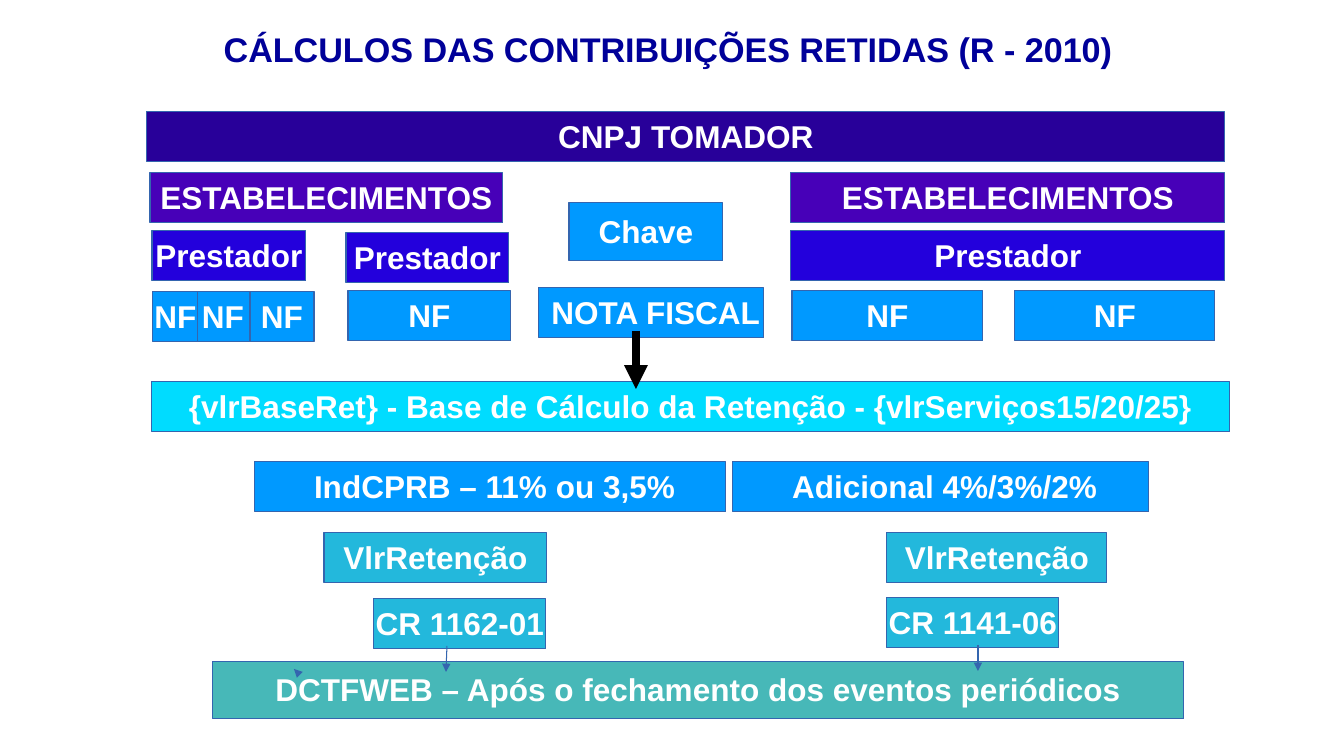
from pptx import Presentation
from pptx import util as u
from pptx.dml.color import RGBColor
from pptx.enum import shapes, text
from pptx.oxml.ns import qn
from lxml import etree

PX = 914400 / 100.8
ROW_H = 50

WHITE = RGBColor(0xFF, 0xFF, 0xFF)
BLACK = RGBColor(0x00, 0x00, 0x00)
NAVY = RGBColor(0x00, 0x00, 0x99)
EDGE = RGBColor(0x34, 0x65, 0xAF)
INDIGO = RGBColor(0x28, 0x00, 0x99)
PURPLE = RGBColor(0x47, 0x00, 0xB8)
BLUE = RGBColor(0x23, 0x00, 0xDC)
SKY = RGBColor(0x00, 0x99, 0xFF)
CYAN = RGBColor(0x00, 0xDC, 0xFF)
TURQUOISE = RGBColor(0x23, 0xB8, 0xDC)
TEAL = RGBColor(0x47, 0xB8, 0xB8)

BOXES = [
    ("CNPJ TOMADOR", INDIGO, 147, 112, 1078, ROW_H),
    ("DCTFWEB – Após o fechamento dos eventos periódicos", TEAL, 213, 662, 971, 57),
    ("ESTABELECIMENTOS", PURPLE, 150, 173, 353, ROW_H),
    ("ESTABELECIMENTOS", PURPLE, 791, 173, 434, ROW_H),
    ("Prestador", BLUE, 152, 231, 154, ROW_H),
    ("Prestador", BLUE, 346, 233, 163, ROW_H),
    ("Prestador", BLUE, 791, 231, 434, ROW_H),
    ("NF", SKY, 250, 292, 64, ROW_H),
    ("NF", SKY, 196, 292, 54, ROW_H),
    ("NF", SKY, 153, 292, 45, ROW_H),
    ("NF", SKY, 348, 291, 163, ROW_H),
    ("NF", SKY, 792, 291, 191, ROW_H),
    ("NF", SKY, 1015, 291, 200, ROW_H),
    ("Chave", SKY, 569, 203, 154, 58),
    (" NOTA FISCAL", SKY, 539, 288, 225, ROW_H),
    ("{vlrBaseRet} - Base de Cálculo da Retenção - {vlrServiços15/20/25}",
     CYAN, 152, 382, 1078, ROW_H),
    (" IndCPRB – 11% ou 3,5%", SKY, 255, 462, 471, ROW_H),
    (" Adicional 4%/3%/2%", SKY, 733, 462, 416, ROW_H),
    ("VlrRetenção", TURQUOISE, 324, 533, 223, ROW_H),
    ("VlrRetenção", TURQUOISE, 887, 533, 220, ROW_H),
    ("CR 1162-01", TURQUOISE, 374, 599, 172, ROW_H),
    ("CR 1141-06", TURQUOISE, 887, 598, 172, ROW_H),
]

ARROWS = [
    (636, 331, 636, 389, BLACK, 5.67),
    (295, 670, 294, 669, EDGE, 0.75),
    (447, 646, 446, 672, EDGE, 0.75),
    (978, 645, 978, 671, EDGE, 0.75),
]


def px(*values):
    return [u.Emu(round(v * PX)) for v in values]


def write(sp, content, size, color):
    tf = sp.text_frame
    tf.text = content
    tf.word_wrap = False
    tf.auto_size = text.MSO_AUTO_SIZE.NONE
    tf.vertical_anchor = text.MSO_ANCHOR.MIDDLE
    tf.margin_left, tf.margin_top, tf.margin_right, tf.margin_bottom = px(9, 6, 9, 5)
    p = tf.paragraphs[0]
    p.alignment = text.PP_ALIGN.CENTER
    p.line_spacing = 0.93
    p.font.name = "Arial"
    p.font.size = u.Pt(size)
    p.font.bold = True
    p.font.color.rgb = color


def add_title(s, content):
    sp = s.shapes.title
    sp.left, sp.top, sp.width, sp.height = px(51, 26, 1234, 49)
    write(sp, content, 24.4, NAVY)


def add_box(s, content, fill, x, y, w, h):
    sp = s.shapes.add_shape(shapes.MSO_SHAPE.RECTANGLE, *px(x, y, w, h))
    sp.shadow.inherit = False
    sp.fill.solid()
    sp.fill.fore_color.rgb = fill
    sp.line.color.rgb = EDGE
    sp.line.width = u.Pt(0.75)
    write(sp, content, 22.5, WHITE)


def add_arrow(s, x1, y1, x2, y2, color, width):
    c = s.shapes.add_connector(shapes.MSO_CONNECTOR.STRAIGHT, *px(x1, y1, x2, y2))
    c.line.color.rgb = color
    c.line.width = u.Pt(width)
    etree.SubElement(c.line._get_or_add_ln(), qn("a:tailEnd"), type="triangle")
    etree.SubElement(c._element.spPr, qn("a:effectLst"))


def main():
    prs = Presentation()
    prs.slide_width, prs.slide_height = px(1344, 756)
    s = prs.slides.add_slide(prs.slide_layouts[5])
    add_title(s, "CÁLCULOS DAS CONTRIBUIÇÕES RETIDAS (R - 2010)")
    for box in BOXES:
        add_box(s, *box)
    for arrow in ARROWS:
        add_arrow(s, *arrow)
    prs.save("out.pptx")


if __name__ == "__main__":
    main()
